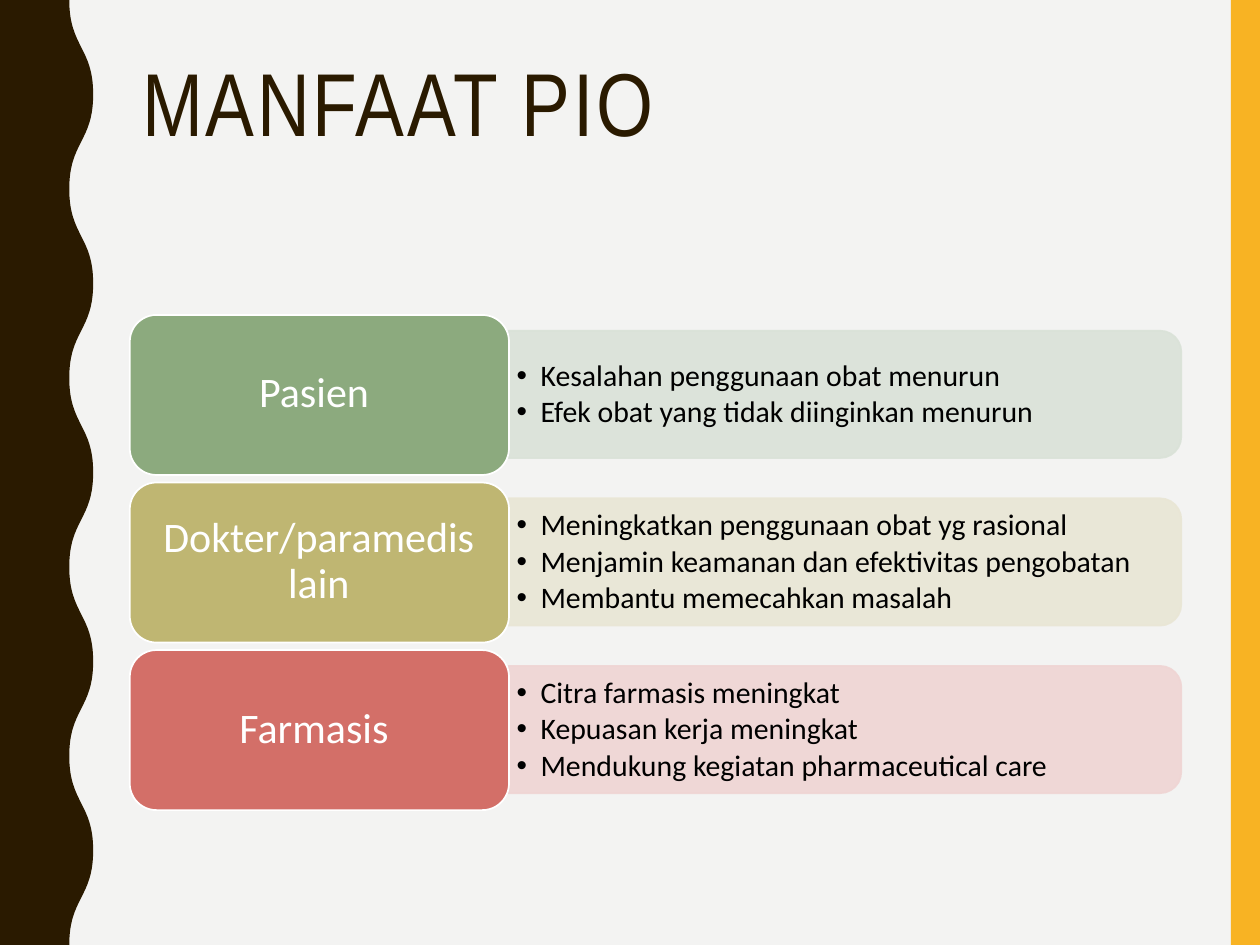
from dataclasses import dataclass

from lxml import etree
from pptx import Presentation
from pptx.dml.color import RGBColor
from pptx.enum.shapes import MSO_SHAPE
from pptx.enum.text import MSO_ANCHOR, PP_ALIGN
from pptx.oxml.ns import qn
from pptx.util import Inches, Pt

RECT = MSO_SHAPE.RECTANGLE
ROUND_RECT = MSO_SHAPE.ROUNDED_RECTANGLE
ROUND_TOP = MSO_SHAPE.ROUND_2_SAME_RECTANGLE
TOP, MIDDLE = MSO_ANCHOR.TOP, MSO_ANCHOR.MIDDLE
LEFT, CENTER = PP_ALIGN.LEFT, PP_ALIGN.CENTER

COLORS = {
    "background": "F3F3F2", "dark": "2A1A00", "accent": "F8B323",
    "white": "FFFFFF", "black": "000000",
    "green": "8CAA7E", "green_tint": "DAE2D8",
    "olive": "BFB672", "olive_tint": "E9E6D5",
    "red": "D36F68", "red_tint": "EFD5D4",
}


@dataclass
class Box:
    left: float
    top: float
    width: float
    height: float

    def emu(self) -> tuple:
        return tuple(Inches(v) for v in (self.left, self.top, self.width, self.height))


@dataclass
class Style:
    font: str
    size: float
    color: str
    align: PP_ALIGN = LEFT
    anchor: MSO_ANCHOR = MIDDLE
    inset_x: float = 0.1
    inset_y: float = 0.05
    spacing: float = 0
    after: float = 0
    bullet: bool = False


@dataclass
class Benefit:
    label: str
    color: str
    points: list[str]


TITLE = Style("Arial Narrow", 51, "dark", anchor=TOP, spacing=1.5)
LABEL = Style("Calibri", 24, "white", align=CENTER)
POINTS = Style("Calibri", 17, "black", inset_x=0.07, inset_y=0.04, after=2.5, bullet=True)

BENEFITS = [
    Benefit("Pasien ", "green", [
        "Kesalahan penggunaan obat menurun",
        "Efek obat yang tidak diinginkan menurun"]),
    Benefit("Dokter/paramedis lain", "olive", [
        "Meningkatkan penggunaan obat yg rasional",
        "Menjamin keamanan dan efektivitas pengobatan",
        "Membantu memecahkan masalah"]),
    Benefit("Farmasis ", "red", [
        "Citra farmasis meningkat",
        "Kepuasan kerja meningkat",
        "Mendukung kegiatan pharmaceutical care"]),
]


def rgb(name: str) -> RGBColor:
    return RGBColor.from_string(COLORS[name])


def paint(sp, fill: str, line: str | None = None, alpha: int = 100) -> None:
    sp.shadow.inherit = False
    sp.fill.solid()
    sp.fill.fore_color.rgb = rgb(fill)
    if line:
        sp.line.color.rgb = rgb(line)
        sp.line.width = Pt(1)
    else:
        sp.line.fill.background()
    if alpha < 100:
        for clr in sp._element.spPr.iter(qn("a:srgbClr")):
            etree.SubElement(clr, qn("a:alpha"), val=str(alpha * 1000))


def add_panel(parent, kind: MSO_SHAPE, box: Box, fill: str, line: str | None = None,
              alpha: int = 100, rotation: float = 0) -> None:
    sp = parent.shapes.add_shape(kind, *box.emu())
    sp.rotation = rotation
    paint(sp, fill, line, alpha)


def add_text(parent, box: Box, lines: list[str], style: Style) -> None:
    tf = parent.shapes.add_textbox(*box.emu()).text_frame
    tf.word_wrap = True
    tf.vertical_anchor = style.anchor
    tf.margin_left = tf.margin_right = Inches(style.inset_x)
    tf.margin_top = tf.margin_bottom = Inches(style.inset_y)
    for i, text in enumerate(lines):
        p = tf.add_paragraph() if i else tf.paragraphs[0]
        p.alignment = style.align
        p.line_spacing = 0.9
        p.space_after = Pt(style.after)
        if style.bullet:
            pPr = p._p.get_or_add_pPr()
            pPr.set("marL", str(Inches(0.19)))
            pPr.set("indent", str(Inches(-0.19)))
            etree.SubElement(pPr, qn("a:buFont"), typeface="Arial")
            etree.SubElement(pPr, qn("a:buChar"), char="•")
        r = p.add_run()
        r.text = text
        r.font.name = style.font
        r.font.size = Pt(style.size)
        r.font.color.rgb = rgb(style.color)
        if style.spacing:
            r._r.get_or_add_rPr().set("spc", str(int(style.spacing * 100)))


def add_wave(s, inner: float, outer: float, height: float, bends: int) -> None:
    step = height / bends
    edge = [(Inches(outer if i % 2 else inner), Inches(i * step)) for i in range(bends + 1)]
    builder = s.shapes.build_freeform(*edge[0])
    builder.add_line_segments([*edge[1:], (0, Inches(height)), (0, 0)])
    sp = builder.convert_to_shape()
    lines = list(sp._element.spPr.iter(qn("a:lnTo")))
    for line, (x0, y0), (x1, y1) in zip(lines, edge, edge[1:]):
        middle = (y0 + y1) // 2
        curve = etree.Element(qn("a:cubicBezTo"))
        for x, y in ((x0, middle), (x1, middle), (x1, y1)):
            etree.SubElement(curve, qn("a:pt"), x=str(x), y=str(y))
        line.getparent().replace(line, curve)
    paint(sp, "dark")


def add_benefit(group, item: Benefit, top: float) -> None:
    tint = item.color + "_tint"
    add_panel(group, ROUND_TOP, Box(6.2, top - 2.04, 1.01, 5.34), tint, tint, 90, 90)
    add_text(group, Box(4.03, top + 0.18, 5.29, 0.91), item.points, POINTS)
    add_panel(group, ROUND_RECT, Box(1.03, top, 3.01, 1.27), item.color, "white")
    add_text(group, Box(1.09, top + 0.06, 2.88, 1.14), [item.label], LABEL)


def main() -> None:
    """Build the slide on the benefits of PIO."""
    prs = Presentation()
    prs.slide_width, prs.slide_height = Inches(10), Inches(7.5)
    s = prs.slides.add_slide(prs.slide_layouts[6])
    s.background.fill.solid()
    s.background.fill.fore_color.rgb = rgb("background")
    add_panel(s, RECT, Box(9.77, 0, 0.23, 7.5), "accent")
    add_wave(s, 0.55, 0.74, 7.5, 10)
    add_text(s, Box(1.03, 0.42, 8.35, 1.63), ["MANFAAT PIO"], TITLE)
    group = s.shapes.add_group_shape()
    for i, item in enumerate(BENEFITS):
        add_benefit(group, item, 2.5 + 1.33 * i)
    prs.save("out.pptx")


if __name__ == "__main__":
    main()
